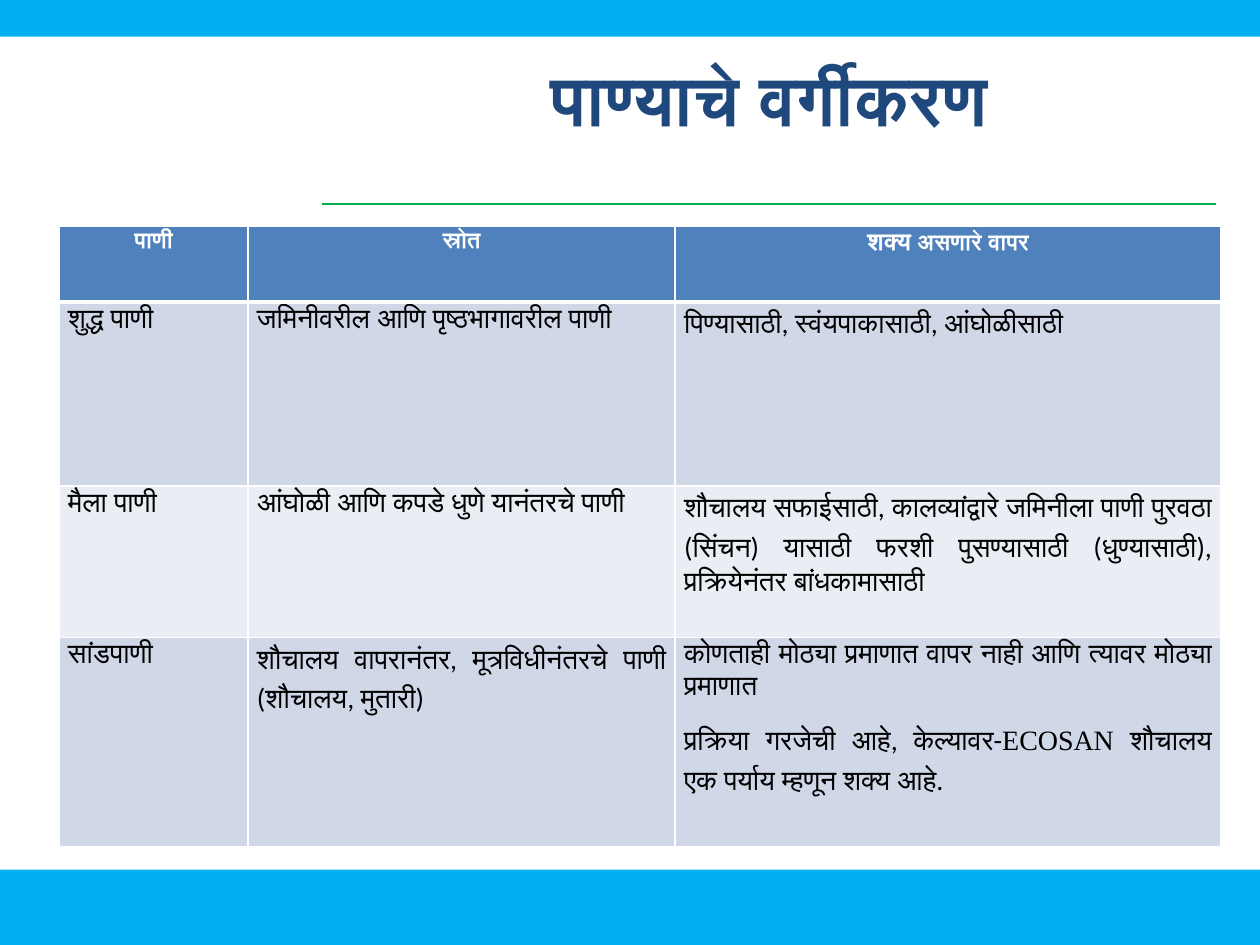
from lxml.etree import SubElement
from pptx import Presentation
from pptx.dml.color import RGBColor
from pptx.enum.shapes import MSO_CONNECTOR, MSO_SHAPE
from pptx.enum.text import MSO_ANCHOR, PP_ALIGN
from pptx.oxml.ns import qn
from pptx.util import Cm, Pt

# Content: a cell is a list of paragraphs, a paragraph a list of (text, changes)
TITLE = "पाण्याचे वर्गीकरण"
HEAD = [
    [[("पाणी", {})]],
    [[("स्रोत", {})]],
    [[("शक्य", {"size": Pt(14)}), (" असणारे वापर", {"size": Pt(13)})]],
]
BODY = [
    [
        [[("शुद्ध पाणी", {})]],
        [[("जमिनीवरील आणि पृष्ठभागावरील पाणी", {})]],
        [[("पिण्यासाठी, स्वंयपाकासाठी, आंघोळीसाठी", {})]],
    ],
    [
        [[("मैला पाणी", {})]],
        [[("आंघोळी आणि कपडे धुणे यानंतरचे पाणी", {})]],
        [[("शौचालय सफाईसाठी, कालव्यांद्वारे जमिनीला पाणी पुरवठा (सिंचन) "
           "यासाठी फरशी पुसण्यासाठी (धुण्यासाठी), प्रक्रियेनंतर बांधकामासाठी", {})]],
    ],
    [
        [[("सांडपाणी", {})]],
        [[("शौचालय वापरानंतर, मूत्रविधीनंतरचे पाणी (शौचालय, मुतारी)", {})]],
        [
            [("कोणताही मोठ्या प्रमाणात वापर नाही आणि त्यावर मोठ्या प्रमाणात", {})],
            [("प्रक्रिया गरजेची आहे, केल्यावर-", {"name": "Calibri"}),
             ("ECOSAN ", {"name": "Times New Roman"}),
             ("शौचालय एक पर्याय म्हणून शक्य आहे.", {"name": "Calibri"})],
        ],
    ],
]
COLS = [3.81, 8.61, 11]
ROWS = [1.52, 3.71, 3.05, 4.21]
BANDS = [(0, 0.74), (17.53, 1.52)]  # top, height
SKY, GREEN, NAVY, BLUE = "00B0F0", "00B050", "1F497D", "4F81BD"
WHITE, BLACK = "FFFFFF", "000000"
TINTS = ["D0D8E8", "E9EDF4"]
WIDE, LEFT, RIGHT = 25.4, 6.5, 24.51


def paint(target, tone):
    """Give a solid fill one colour."""
    target.fill.solid()
    target.fill.fore_color.rgb = RGBColor.from_string(tone)


def style(font, size, tone, bold):
    font.name, font.size, font.bold = "Calibri", Pt(size), bold
    font.color.rgb = RGBColor.from_string(tone)


def edge(cell, side, width):
    """Draw one white cell border."""
    props = cell._tc.get_or_add_tcPr()
    line = SubElement(props, qn("a:ln" + side), w=str(Pt(width)))
    fill = SubElement(line, qn("a:solidFill"))
    SubElement(fill, qn("a:srgbClr"), val=WHITE)


def write(cell, paras, head):
    """Set the paragraphs of one table cell."""
    cell.margin_left = cell.margin_right = Cm(0.18)
    cell.margin_top = cell.margin_bottom = 0
    frame = cell.text_frame
    for i, runs in enumerate(paras):
        para = frame.add_paragraph() if i else frame.paragraphs[0]
        para.alignment = PP_ALIGN.CENTER if head else PP_ALIGN.JUSTIFY
        para.line_spacing, para.space_after = 1.15, Pt(10)
        look = (13, WHITE, True) if head else (16, BLACK, False)
        style(para.font, *look)
        for text, changes in runs:
            run = para.add_run()
            run.text = text
            if changes:
                style(run.font, *look)
            for key, value in changes.items():
                setattr(run.font, key, value)


deck = Presentation()
deck.slide_width, deck.slide_height = Cm(WIDE), Cm(19.05)
slide = deck.slides.add_slide(deck.slide_layouts[6])
shapes = slide.shapes

# Bands at top and bottom
for top, high in BANDS:
    band = shapes.add_shape(MSO_SHAPE.RECTANGLE, 0, Cm(top), Cm(WIDE), Cm(high))
    band.shadow.inherit = False
    paint(band, SKY)
    band.line.fill.background()

# Title and the rule below it
box = shapes.add_textbox(Cm(LEFT), Cm(0.9), Cm(RIGHT - LEFT), Cm(2.13))
frame = box.text_frame
frame.word_wrap = True
frame.vertical_anchor = MSO_ANCHOR.MIDDLE
para = frame.paragraphs[0]
para.text, para.alignment = TITLE, PP_ALIGN.CENTER
style(para.font, 40, NAVY, True)

rule = shapes.add_connector(MSO_CONNECTOR.STRAIGHT, Cm(LEFT), Cm(4.11), Cm(RIGHT), Cm(4.11))
rule.line.color.rgb = RGBColor.from_string(GREEN)
rule.line.width = Pt(0.75)
SubElement(rule._element.spPr, qn("a:effectLst"))

# Table of water types
table = shapes.add_table(len(ROWS), len(COLS), Cm(1.19), Cm(4.57),
                         Cm(sum(COLS)), Cm(sum(ROWS))).table
for col, wide in zip(table.columns, COLS):
    col.width = Cm(wide)
for row, high in zip(table.rows, ROWS):
    row.height = Cm(high)
for r, line in enumerate([HEAD] + BODY):
    for c, paras in enumerate(line):
        cell = table.cell(r, c)
        write(cell, paras, r == 0)
        for side in "LRTB":
            thick = (r, side) in [(0, "B"), (1, "T")]
            edge(cell, side, 3 if thick else 1)
        paint(cell, TINTS[(r - 1) % 2] if r else BLUE)

deck.save("out.pptx")
